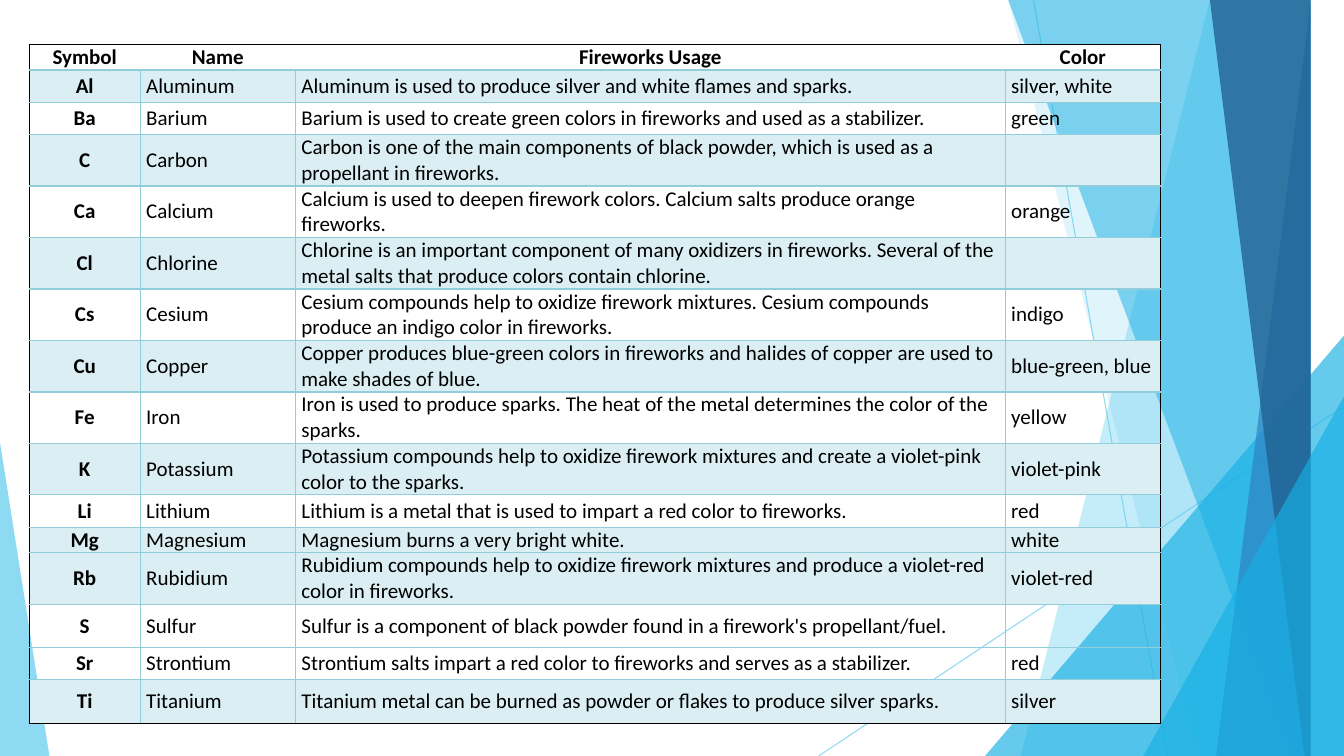
from lxml import etree
from pptx import Presentation
from pptx.dml.color import RGBColor
from pptx.enum import shapes, text
from pptx.oxml.ns import qn
from pptx.util import Inches, Pt


class Theme:
    sky = "5FCBEF"
    cyan = "17B0E4"
    blue = "2E83C3"
    navy = "226292"
    rule = "92CDDC"
    band = "DAEEF3"
    ink = "000000"
    white = "FFFFFF"
    font = "Calibri"
    size = Pt(15)
    thin = 1
    thick = 1.5
    hair = 0.75


WIDE, HIGH = 13.33, 7.5

DECOR = [
    ("line", (10.25, 0, 11.58, HIGH), Theme.sky, 70),
    ("line", (WIDE, 4.03, 8.12, HIGH), Theme.sky, 70),
    ("panel", (12.28, 10.04), Theme.sky, 36),
    ("panel", (10.5, 11.83), Theme.sky, 20),
    ("wedge", (9.77, 3.33, 3.56, 4.17, 1), Theme.cyan, 66),
    ("panel", (10.21, 12.91), Theme.cyan, 50),
    ("panel", (13.03, 11.92), Theme.blue, 70),
    ("panel", (11.96, 13.18), Theme.navy, 80),
    ("wedge", (11.34, 3.93, 1.99, 3.57, 1), Theme.cyan, 66),
    ("wedge", (0, 4.39, 0.49, 3.11, 0), Theme.sky, 70),
]

HEAD = ("Symbol", "Name", "Fireworks Usage", "Color")
ROWS = [
    ("Al", "Aluminum", "Aluminum is used to produce silver and white flames and sparks.", "silver, white"),
    ("Ba", "Barium", "Barium is used to create green colors in fireworks and used as a stabilizer.", "green"),
    ("C", "Carbon", "Carbon is one of the main components of black powder, which is used as a propellant in fireworks.", ""),
    ("Ca", "Calcium", "Calcium is used to deepen firework colors. Calcium salts produce orange fireworks.", "orange"),
    ("Cl", "Chlorine", "Chlorine is an important component of many oxidizers in fireworks. Several of the metal salts that produce colors contain chlorine.", ""),
    ("Cs", "Cesium", "Cesium compounds help to oxidize firework mixtures. Cesium compounds produce an indigo color in fireworks.", "indigo"),
    ("Cu", "Copper", "Copper produces blue-green colors in fireworks and halides of copper are used to make shades of blue.", "blue-green, blue"),
    ("Fe", "Iron", "Iron is used to produce sparks. The heat of the metal determines the color of the sparks.", "yellow"),
    ("K", "Potassium", "Potassium compounds help to oxidize firework mixtures and create a violet-pink color to the sparks.", "violet-pink"),
    ("Li", "Lithium", "Lithium is a metal that is used to impart a red color to fireworks.", "red"),
    ("Mg", "Magnesium", "Magnesium burns a very bright white.", "white"),
    ("Rb", "Rubidium", "Rubidium compounds help to oxidize firework mixtures and produce a violet-red color in fireworks.", "violet-red"),
    ("S", "Sulfur", "Sulfur is a component of black powder found in a firework's propellant/fuel.", ""),
    ("Sr", "Strontium", "Strontium salts impart a red color to fireworks and serves as a stabilizer.", "red"),
    ("Ti", "Titanium", "Titanium metal can be burned as powder or flakes to produce silver sparks.", "silver"),
]
BANDS = {"Al", "C", "Cl", "Cu", "K", "Mg", "Rb", "Ti"}
COLS = (1.1, 1.54, 7.04, 1.54)
TALL = {"Symbol": 0.22, "Mg": 0.22, "Al": 0.32, "Ba": 0.32, "Li": 0.32, "Sr": 0.32, "Cs": 0.48}
LEFT, TOP, USUAL = 0.29, 0.44, 0.43


def paint(fill, color, alpha=100):
    fill.solid()
    fill.fore_color.rgb = RGBColor.from_string(color)
    if alpha < 100:
        tone = fill._xPr.find(".//" + qn("a:srgbClr"))
        etree.SubElement(tone, qn("a:alpha"), val=str(alpha * 1000))


def decorate(tree, kind, spot, color, alpha):
    if kind == "line":
        line = tree.add_connector(shapes.MSO_CONNECTOR.STRAIGHT, *map(Inches, spot))
        line.line.width = Pt(Theme.hair)
        paint(line.line.fill, color, alpha)
        etree.SubElement(line._element.spPr, qn("a:effectLst"))
        return
    if kind == "panel":
        top, foot = spot
        pen = tree.build_freeform(top, -0.01, scale=Inches(1))
        pen.add_line_segments([(WIDE, -0.01), (WIDE, HIGH), (foot, HIGH)])
        shape = pen.convert_to_shape()
    else:
        *box, tip = spot
        shape = tree.add_shape(shapes.MSO_SHAPE.ISOSCELES_TRIANGLE, *map(Inches, box))
        shape.adjustments[0] = tip
    paint(shape.fill, color, alpha)
    shape.line.fill.background()
    shape.shadow.inherit = False


def border(cell, edges):
    props = cell._tc.get_or_add_tcPr()
    for slot, (side, edge) in enumerate(zip("LRTB", edges)):
        line = etree.Element(qn("a:ln" + side))
        if edge:
            color, width = edge
            line.set("w", str(Pt(width)))
            solid = etree.SubElement(line, qn("a:solidFill"))
            etree.SubElement(solid, qn("a:srgbClr"), val=color)
        else:
            etree.SubElement(line, qn("a:noFill"))
        props.insert(slot, line)


def edges(row, col):
    outer, inner = (Theme.ink, Theme.thin), (Theme.rule, Theme.thin)
    heavy = (Theme.rule, Theme.thick)
    side = inner if row else None
    return (
        side if col else outer,
        side if col < len(COLS) - 1 else outer,
        outer if row == 0 else heavy if row == 1 else inner,
        heavy if row == 0 else outer if row == len(ROWS) else inner,
    )


def write(cell, words, row, col):
    cell.margin_left = cell.margin_right = Inches(0.06)
    cell.margin_top = cell.margin_bottom = 0
    cell.vertical_anchor = text.MSO_ANCHOR.MIDDLE
    cell.text = words
    para = cell.text_frame.paragraphs[0]
    key = row == 0 or col == 0
    para.alignment = text.PP_ALIGN.CENTER if key else text.PP_ALIGN.LEFT
    para.font.name, para.font.size, para.font.bold = Theme.font, Theme.size, key
    para.font.color.rgb = RGBColor.from_string(Theme.ink)


def tabulate(tree):
    data = [HEAD, *ROWS]
    tall = [TALL.get(line[0], USUAL) for line in data]
    box = map(Inches, (LEFT, TOP, sum(COLS), sum(tall)))
    table = tree.add_table(len(data), len(COLS), *box).table
    table.first_row = table.horz_banding = False
    for col, width in zip(table.columns, COLS):
        col.width = Inches(width)
    for row, line in enumerate(data):
        table.rows[row].height = Inches(tall[row])
        for col, words in enumerate(line):
            cell = table.cell(row, col)
            write(cell, words, row, col)
            border(cell, edges(row, col))
            if row == 0:
                paint(cell.fill, Theme.white)
            elif line[0] in BANDS:
                paint(cell.fill, Theme.band)
            else:
                cell.fill.background()


def main():
    deck = Presentation()
    deck.slide_width, deck.slide_height = Inches(WIDE), Inches(HIGH)
    tree = deck.slides.add_slide(deck.slide_layouts[6]).shapes
    for item in DECOR:
        decorate(tree, *item)
    tabulate(tree)
    deck.save("out.pptx")


if __name__ == "__main__":
    main()
